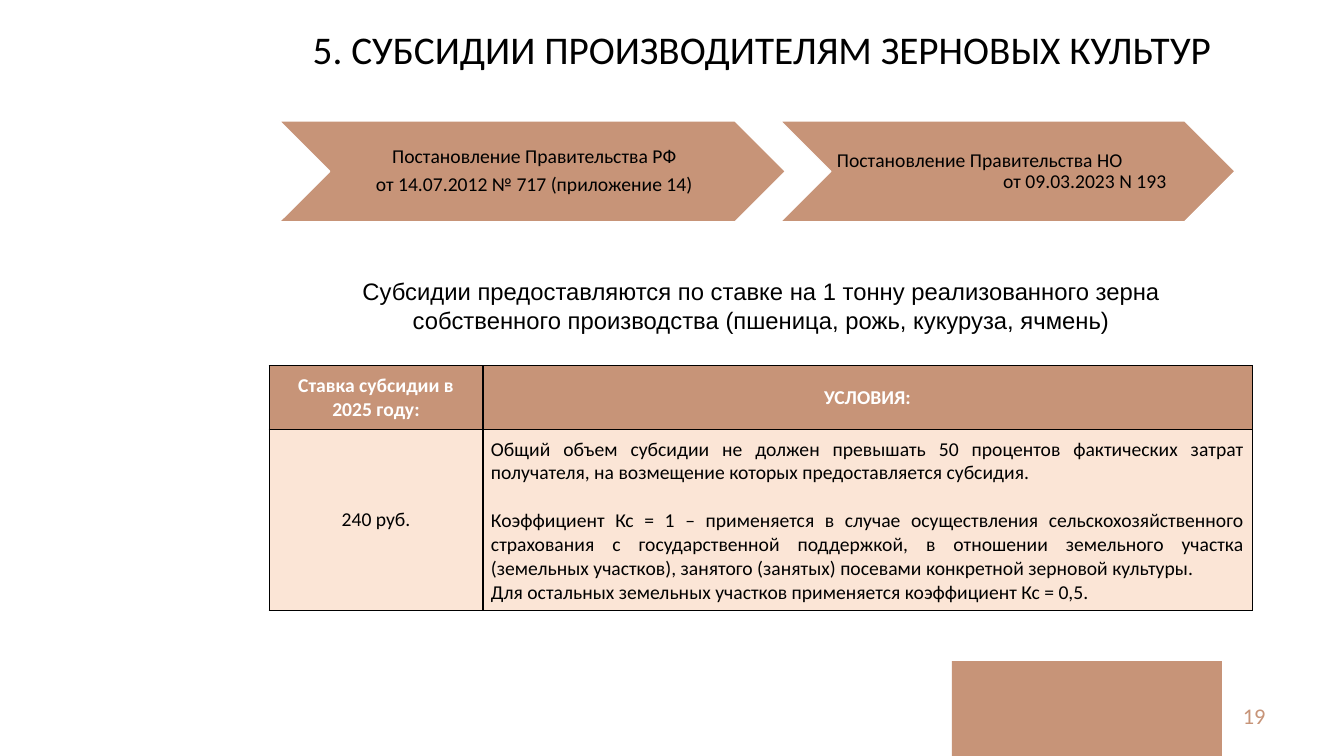
from pptx import Presentation
from pptx.dml.color import RGBColor
from pptx.enum.shapes import MSO_SHAPE as Shape
from pptx.enum.text import MSO_ANCHOR as Anchor, PP_ALIGN as Align
from pptx.oxml.ns import qn
from pptx.util import Inches, Pt
from lxml.etree import SubElement as sub

TAN, PALE, BLACK, WHITE = "C79478", "FBE5D6", "000000", "FFFFFF"
TITLE = "5. СУБСИДИИ ПРОИЗВОДИТЕЛЯМ ЗЕРНОВЫХ КУЛЬТУР"
NOTE = ("Субсидии предоставляются по ставке на 1 тонну реализованного зерна "
        "собственного производства (пшеница, рожь, кукуруза, ячмень)")
PAGE = "19"
ACTS = [
    (2.77, 5.02, 0.02, 5, [
        ("Постановление Правительства РФ", Align.CENTER),
        ("от 14.07.2012 № 717 (приложение 14)", Align.CENTER)]),
    (7.74, 4.51, 0.18, 0, [
        ("Постановление Правительства НО", Align.LEFT),
        ("от 09.03.2023 N 193", Align.RIGHT)]),
]
HEAD = ["Ставка субсидии в 2025 году:", "УСЛОВИЯ:"]
RATE = "240 руб."
TERMS = [
    ("Общий объем субсидии не должен превышать 50 процентов фактических затрат "
     "получателя, на возмещение которых предоставляется субсидия.", 0),
    ("Коэффициент Кс = 1 – применяется в случае осуществления "
     "сельскохозяйственного страхования с государственной поддержкой, "
     "в отношении земельного участка (земельных участков), занятого (занятых) "
     "посевами конкретной зерновой культуры.", 17),
    ("Для остальных земельных участков применяется коэффициент Кс = 0,5.", 0),
]
COLS = [2.12, 7.63]
ROWS = [0.63, 1.79]


def rgb(code):
    return RGBColor.from_string(code)


def box(*at):
    return [Inches(v) for v in at]


def write(frame, lines, size, color=BLACK, font="Calibri", bold=False, space=None):
    frame.word_wrap = True
    for i, (text, align, gap) in enumerate(lines):
        para = frame.paragraphs[0] if i == 0 else frame.add_paragraph()
        para.alignment = align
        para.space_before = Pt(gap)
        if space:
            para.line_spacing = space
        run = para.add_run()
        run.text = text
        run.font.size = Pt(size)
        run.font.name = font
        run.font.bold = bold
        run.font.color.rgb = rgb(color)


def block(kind, at, line=None):
    shape = slide.shapes.add_shape(kind, *box(*at))
    shape.shadow.inherit = False
    shape.fill.solid()
    shape.fill.fore_color.rgb = rgb(TAN)
    if line:
        shape.line.color.rgb = rgb(line)
        shape.line.width = Pt(1)
    else:
        shape.line.fill.background()
    return shape


def label(at, text, align, size, color=BLACK, font="Calibri", anchor=Anchor.TOP):
    frame = slide.shapes.add_textbox(*box(*at)).text_frame
    frame.vertical_anchor = anchor
    write(frame, [(text, align, 0)], size, color, font)


def style(cell, fill, anchor):
    cell.margin_left = cell.margin_right = Inches(0.08)
    cell.margin_top = cell.margin_bottom = Inches(0.08)
    cell.vertical_anchor = anchor
    props = cell._tc.get_or_add_tcPr()
    for side in ("a:lnL", "a:lnR", "a:lnT", "a:lnB"):
        edge = sub(props, qn(side), w=str(Pt(1)))
        sub(sub(edge, qn("a:solidFill")), qn("a:srgbClr"), val=BLACK)
    cell.fill.solid()
    cell.fill.fore_color.rgb = rgb(fill)


deck = Presentation()
deck.slide_width, deck.slide_height = box(13.33, 7.5)
slide = deck.slides.add_slide(deck.slide_layouts[5])

title = slide.shapes.title
title.left, title.top, title.width, title.height = box(2.96, 0.2, 9.19, 0.57)
title.text_frame.vertical_anchor = Anchor.TOP
write(title.text_frame, [(TITLE, Align.CENTER, 0)], 28)

block(Shape.RECTANGLE, (9.44, 6.56, 2.68, 0.94))
label((9.65, 6.9, 3, 0.4), PAGE, Align.RIGHT, 16, TAN, anchor=Anchor.MIDDLE)

for left, width, inset, gap, lines in ACTS:
    frame = block(Shape.CHEVRON, (left, 1.2, width, 1), WHITE).text_frame
    frame.margin_left, frame.margin_right = box(0.06, inset)
    frame.margin_top = frame.margin_bottom = Inches(0.02)
    frame.vertical_anchor = Anchor.MIDDLE
    rows = [(text, align, gap if i else 0) for i, (text, align) in enumerate(lines)]
    write(frame, rows, 14, space=0.9)

label((2.85, 2.7, 9.4, 0.67), NOTE, Align.CENTER, 17, font="Arial")

at = box(2.67, 3.63, sum(COLS), sum(ROWS))
table = slide.shapes.add_table(len(ROWS), len(COLS), *at).table
for col, width in zip(table.columns, COLS):
    col.width = Inches(width)
for row, height in zip(table.rows, ROWS):
    row.height = Inches(height)

for i, text in enumerate(HEAD):
    cell = table.cell(0, i)
    style(cell, TAN, Anchor.MIDDLE)
    write(cell.text_frame, [(text, Align.CENTER, 0)], 14, WHITE, bold=True)

rate, terms = table.cell(1, 0), table.cell(1, 1)
style(rate, PALE, Anchor.MIDDLE)
write(rate.text_frame, [(RATE, Align.CENTER, 0)], 14)
style(terms, PALE, Anchor.TOP)
write(terms.text_frame, [(text, Align.JUSTIFY, gap) for text, gap in TERMS], 14)

deck.save("out.pptx")
